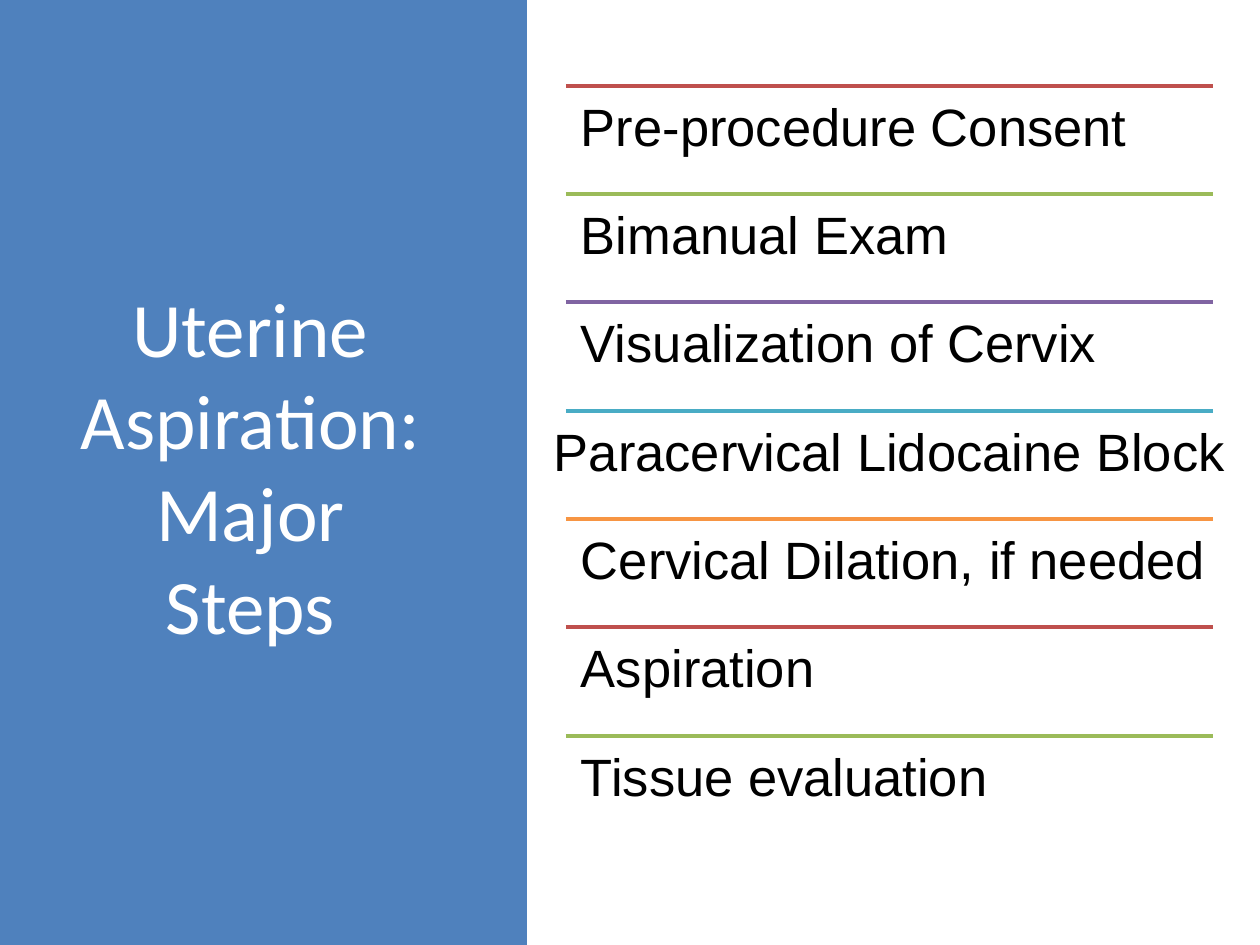
from lxml.etree import SubElement
from pptx import Presentation
from pptx.dml.color import RGBColor
from pptx.enum.shapes import MSO_CONNECTOR, MSO_SHAPE
from pptx.enum.text import MSO_ANCHOR, PP_ALIGN
from pptx.oxml.ns import qn
from pptx.util import Emu, Pt


def px(n):
    """Turn pixels, 126 to the inch, into EMU."""
    return Emu(round(n * 914400 / 126))


def add_text(box, text, font, size, color, pad_x, pad_y):
    frame = box.text_frame
    frame.word_wrap = True
    frame.margin_left = frame.margin_right = px(pad_x)
    frame.margin_top = frame.margin_bottom = px(pad_y)
    para = frame.paragraphs[0]
    run = para.add_run()
    run.text = text
    run.font.name = font
    run.font.size = Pt(size)
    run.font.color.rgb = RGBColor.from_string(color)
    return frame, para


deck = Presentation()
deck.slide_width, deck.slide_height = px(1260), px(945)
slide = deck.slides.add_slide(deck.slide_layouts[6])
shapes = slide.shapes

panel = shapes.add_shape(MSO_SHAPE.RECTANGLE, 0, 0, px(527), px(945))
panel.shadow.inherit = False
panel.fill.solid()
panel.fill.fore_color.rgb = RGBColor.from_string("4F81BD")
panel.line.fill.background()

title = shapes.add_textbox(px(54), px(86), px(393), px(758))
frame, para = add_text(title, "Uterine Aspiration: Major Steps",
                       "Calibri", 44, "FFFFFF", 13, 6)
frame.vertical_anchor = MSO_ANCHOR.MIDDLE
para.alignment = PP_ALIGN.CENTER

LEFT, WIDTH, TOP, SPAN = 566, 647, 86, 650
# Step, rule colour, text left, text width
steps = [
    ("Pre-procedure Consent", "BF504D", LEFT, WIDTH),
    ("Bimanual Exam", "9BBB59", LEFT, WIDTH),
    ("Visualization of Cervix", "8064A2", LEFT, WIDTH),
    ("Paracervical Lidocaine Block", "49ACC5", 539, 733),
    ("Cervical Dilation, if needed", "F79543", LEFT, 682),
    ("Aspiration", "BF504D", LEFT, WIDTH),
    ("Tissue evaluation", "9BBB59", LEFT, WIDTH),
]
group = shapes.add_group_shape()
for i, (step, color, left, width) in enumerate(steps):
    y = TOP + i * SPAN // (len(steps) - 1)
    rule = group.shapes.add_connector(
        MSO_CONNECTOR.STRAIGHT, px(LEFT), px(y), px(LEFT + WIDTH), px(y))
    rule.line.color.rgb = RGBColor.from_string(color)
    rule.line.width = Pt(2)
    SubElement(rule._element.spPr, qn("a:effectLst"))

    box = group.shapes.add_textbox(px(left), px(y), px(width), px(108))
    frame, para = add_text(box, step, "Arial", 30, "000000", 15, 15)
    para.line_spacing = 0.9

deck.save("out.pptx")
